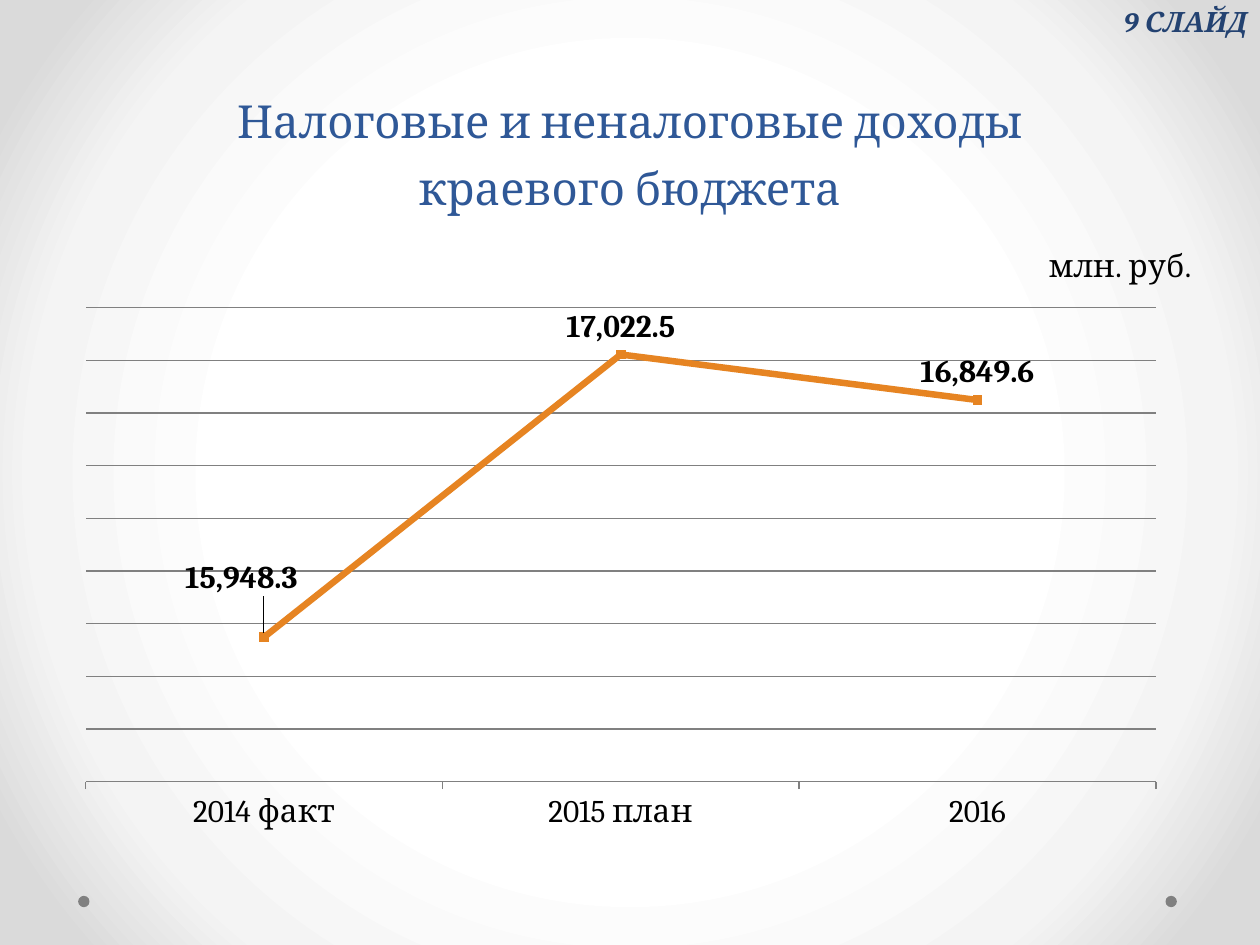
from dataclasses import dataclass

import pptx
import pptx.chart.data
import pptx.dml.color
import pptx.enum.chart
import pptx.enum.shapes
import pptx.enum.text
import pptx.oxml
import pptx.oxml.ns
import pptx.util

Inches = pptx.util.Inches
Pt = pptx.util.Pt
RGBColor = pptx.dml.color.RGBColor

FONT = "Cambria"
BLUE = RGBColor(0x2F, 0x58, 0x97)
NAVY = RGBColor(0x23, 0x42, 0x71)
ORANGE = RGBColor(0xE6, 0x84, 0x22)
GRAY = RGBColor(0x80, 0x80, 0x80)
BLACK = RGBColor(0, 0, 0)
STOPS = ((0, "FFFFFF"), (50, "FFFFFF"), (76, "F4F4F4"), (92, "DADADA"), (100, "DADADA"))
FORMAT = "#,##0.0"
CHART = "http://schemas.openxmlformats.org/drawingml/2006/chart"


@dataclass
class Dot:
    left: float
    top: float = 7.11
    size: float = 0.09


DOTS = (Dot(0.62), Dot(9.25))


def style(font, size: float, color: RGBColor, bold: bool = False) -> None:
    font.name = FONT
    font.size = Pt(size)
    font.bold = bold
    font.color.rgb = color


def paint_back(slide) -> None:
    slide.background.fill.gradient()
    grad = slide.element.xpath(".//p:bgPr/a:gradFill")[0]
    stops = "".join(
        f'<a:gs pos="{at * 1000}"><a:srgbClr val="{tone}"/></a:gs>' for at, tone in STOPS
    )
    fill = pptx.oxml.parse_xml(
        f'<a:gradFill {pptx.oxml.ns.nsdecls("a")} rotWithShape="1"><a:gsLst>{stops}</a:gsLst>'
        '<a:path path="circle"><a:fillToRect l="50000" t="50000" r="50000" b="50000"/>'
        "</a:path></a:gradFill>"
    )
    grad.getparent().replace(grad, fill)


def draw_dot(slide, dot: Dot) -> None:
    shape = slide.shapes.add_shape(
        pptx.enum.shapes.MSO_SHAPE.OVAL,
        Inches(dot.left), Inches(dot.top), Inches(dot.size), Inches(dot.size),
    )
    shape.shadow.inherit = False
    shape.fill.solid()
    shape.fill.fore_color.rgb = GRAY
    shape.line.fill.background()


def fill_title(slide) -> None:
    title = slide.shapes.title
    title.left, title.top = Inches(0.5), Inches(0)
    title.width, title.height = Inches(9), Inches(1.75)
    frame = title.text_frame
    frame.vertical_anchor = pptx.enum.text.MSO_ANCHOR.BOTTOM
    para = frame.paragraphs[0]
    para.alignment = pptx.enum.text.PP_ALIGN.CENTER
    para.line_spacing = Pt(38)
    for row, text in enumerate(("Налоговые и неналоговые доходы", "краевого бюджета")):
        if row:
            para.add_line_break()
        run = para.add_run()
        run.text = text
        style(run.font, 26, BLUE)


def place(x: float, y: float, size: str = "", inner: bool = False):
    target = '<c:layoutTarget val="inner"/>' if inner else ""
    modes = '<c:xMode val="edge"/><c:yMode val="edge"/>' if x >= 0 else ""
    return pptx.oxml.parse_xml(
        f'<c:layout xmlns:c="{CHART}"><c:manualLayout>{target}{modes}'
        f'<c:x val="{x}"/><c:y val="{y}"/>{size}</c:manualLayout></c:layout>'
    )


def set_place(node, layout) -> None:
    for old in node.xpath("./c:layout"):
        node.remove(old)
    lead = node.xpath("./c:tx | ./c:idx")
    if lead:
        lead[0].addnext(layout)
    else:
        node.insert(0, layout)


def style_labels(line) -> None:
    labels = line.data_labels
    labels.show_value = True
    labels.number_format = FORMAT
    labels.number_format_is_linked = False
    labels.position = pptx.enum.chart.XL_LABEL_POSITION.ABOVE
    style(labels.font, 18, BLACK, True)
    first = line.points[0].data_label
    style(first.font, 18, BLACK, True)
    first.position = pptx.enum.chart.XL_LABEL_POSITION.ABOVE
    group = line._element.xpath("./c:dLbls")[0]
    set_place(group.xpath("./c:dLbl")[0], place(-0.02, -0.05))
    for old in group.xpath("./c:showLeaderLines"):
        group.remove(old)
    group.append(pptx.oxml.parse_xml(f'<c:showLeaderLines xmlns:c="{CHART}" val="1"/>'))


def draw_chart(slide) -> None:
    data = pptx.chart.data.CategoryChartData(number_format=FORMAT)
    data.categories = ("2014 факт", "2015 план", "2016")
    data.add_series("Series 1", (15948.3, 17022.5, 16849.6))
    chart = slide.shapes.add_chart(
        pptx.enum.chart.XL_CHART_TYPE.LINE_MARKERS,
        Inches(0.5), Inches(1.75), Inches(9), Inches(4.95), data,
    ).chart
    style(chart.font, 18, BLACK)
    chart.has_legend = False
    chart.has_title = True
    run = chart.chart_title.text_frame.paragraphs[0].add_run()
    run.text = "млн. руб."
    style(run.font, 18, BLACK)
    set_place(chart.chart_title._element, place(0.87, 0.03))
    size = '<c:w val="0.95"/><c:h val="0.76"/>'
    set_place(chart._chartSpace.xpath(".//c:plotArea")[0], place(0.02, 0.14, size, True))

    scale = chart.value_axis
    scale.minimum_scale, scale.maximum_scale, scale.major_unit = 15400, 17200, 200
    scale.visible = False
    scale.has_major_gridlines = True
    scale.tick_labels.number_format = FORMAT
    scale.tick_labels.number_format_is_linked = False
    base = chart.category_axis
    base.major_tick_mark = pptx.enum.chart.XL_TICK_MARK.OUTSIDE
    for edge in (scale.major_gridlines.format.line, base.format.line):
        edge.color.rgb = GRAY
        edge.width = Pt(0.75)

    chart.plots[0].vary_by_categories = False
    line = chart.plots[0].series[0]
    line.smooth = False
    line.format.line.color.rgb = ORANGE
    line.format.line.width = Pt(3.75)
    line.marker.style = pptx.enum.chart.XL_MARKER_STYLE.SQUARE
    line.marker.size = 5
    line.marker.format.fill.solid()
    line.marker.format.fill.fore_color.rgb = ORANGE
    line.marker.format.line.color.rgb = ORANGE
    style_labels(line)


def add_label(slide) -> None:
    box = slide.shapes.add_textbox(Inches(8.72), Inches(-0.01), Inches(1.36), Inches(0.37))
    frame = box.text_frame
    frame.word_wrap = True
    frame.margin_left = Inches(0.2)
    run = frame.paragraphs[0].add_run()
    run.text = "9 СЛАЙД"
    style(run.font, 16, NAVY, True)
    run.font.italic = True


def main() -> None:
    deck = pptx.Presentation()
    deck.slide_width, deck.slide_height = Inches(10), Inches(7.5)
    slide = deck.slides.add_slide(deck.slide_layouts[5])
    paint_back(slide)
    for dot in DOTS:
        draw_dot(slide, dot)
    fill_title(slide)
    draw_chart(slide)
    add_label(slide)
    deck.save("out.pptx")


if __name__ == "__main__":
    main()
